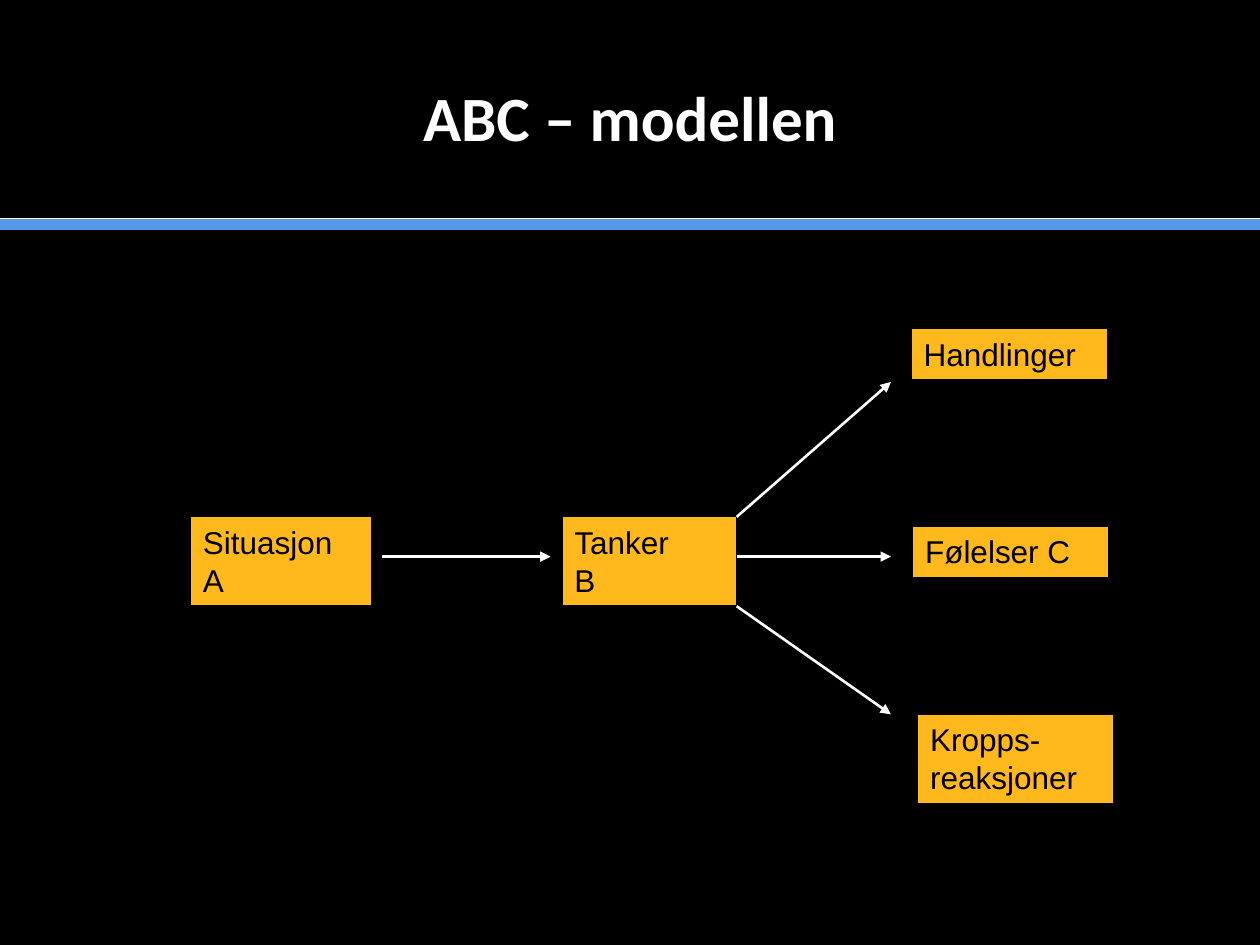
from dataclasses import dataclass

from lxml import etree
from pptx import Presentation
from pptx.dml.color import RGBColor
from pptx.enum.shapes import MSO_CONNECTOR, MSO_SHAPE
from pptx.enum.text import MSO_ANCHOR, MSO_AUTO_SIZE, PP_ALIGN
from pptx.oxml.ns import qn
from pptx.util import Cm, Pt

STRAIGHT = MSO_CONNECTOR.STRAIGHT
RECTANGLE = MSO_SHAPE.RECTANGLE
TOP, MIDDLE = MSO_ANCHOR.TOP, MSO_ANCHOR.MIDDLE
GROW = MSO_AUTO_SIZE.SHAPE_TO_FIT_TEXT
LEFT, CENTER = PP_ALIGN.LEFT, PP_ALIGN.CENTER
TITLE_ONLY = 5

COLORS = {
    "background": "000000",
    "rule": "5799E8",
    "light": "FFFFFF",
    "box": "FFB91D",
    "dark": "000000",
}
TITLE_FONT = {"name": "Calibri", "size": Pt(36), "bold": True}
BOX_FONT = {"name": "Arial", "size": Pt(18), "bold": False}
BOX_FRAME = {"word_wrap": True, "auto_size": GROW, "vertical_anchor": TOP}

SLIDE_WIDTH, SLIDE_HEIGHT = 25.4, 19.05
ONE_LINE, TWO_LINES = 1.03, 1.8
OUTCOME_WIDTH = 3.96


@dataclass(frozen=True)
class Box:
    text: str
    left: float
    top: float
    width: float
    height: float


@dataclass(frozen=True)
class Line:
    x1: float
    y1: float
    x2: float
    y2: float
    color: str = "light"
    weight: float = 1.5
    arrow: bool = True


SITUATION = Box("Situasjon A", 3.84, 10.42, 3.66, TWO_LINES)
THOUGHTS = Box("Tanker\vB", 11.33, 10.42, 3.52, TWO_LINES)
OUTCOMES = [
    Box("Handlinger", 18.37, 6.63, OUTCOME_WIDTH, ONE_LINE),
    Box("Følelser C", 18.4, 10.61, OUTCOME_WIDTH, ONE_LINE),
    Box("Kropps-\vreaksjoner", 18.5, 14.4, OUTCOME_WIDTH, TWO_LINES),
]

RULES = [
    Line(0, 4.52, SLIDE_WIDTH, 4.52, "rule", 7, False),
    Line(0, 4.4, SLIDE_WIDTH, 4.4, "light", 0.5, False),
]
FLOW_Y = 11.22
FAN_START, FAN_END = THOUGHTS.left + THOUGHTS.width, 17.96
ARROWS = [
    Line(7.7, FLOW_Y, 11.1, FLOW_Y),
    Line(FAN_START, THOUGHTS.top, FAN_END, 7.7),
    Line(FAN_START, THOUGHTS.top + THOUGHTS.height, FAN_END, 14.4),
    Line(FAN_START, FLOW_Y, FAN_END, FLOW_Y),
]


def color(key: str) -> RGBColor:
    return RGBColor.from_string(COLORS[key])


def apply_format(target, values: dict) -> None:
    for attribute, value in values.items():
        setattr(target, attribute, value)


def style_text(frame, font: dict, color_key: str, alignment) -> None:
    for paragraph in frame.paragraphs:
        paragraph.alignment = alignment
        for run in paragraph.runs:
            apply_format(run.font, font)
            run.font.color.rgb = color(color_key)


def draw_title(slide, text: str) -> None:
    title = slide.shapes.title
    apply_format(title, {"left": Cm(1.27), "top": Cm(0.76),
                         "width": Cm(22.86), "height": Cm(3.18)})
    title.text_frame.text = text
    title.text_frame.vertical_anchor = MIDDLE
    style_text(title.text_frame, TITLE_FONT, "light", CENTER)


def draw_box(slide, box: Box) -> None:
    shape = slide.shapes.add_shape(
        RECTANGLE, Cm(box.left), Cm(box.top), Cm(box.width), Cm(box.height))
    shape.shadow.inherit = False
    shape.fill.solid()
    shape.fill.fore_color.rgb = color("box")
    shape.line.color.rgb = color("dark")
    shape.line.width = Pt(0.75)
    shape.text_frame.text = box.text
    apply_format(shape.text_frame, BOX_FRAME)
    style_text(shape.text_frame, BOX_FONT, "dark", LEFT)


def draw_line(slide, line: Line) -> None:
    connector = slide.shapes.add_connector(
        STRAIGHT, Cm(line.x1), Cm(line.y1), Cm(line.x2), Cm(line.y2))
    connector.line.color.rgb = color(line.color)
    connector.line.width = Pt(line.weight)
    properties = connector._element.spPr
    if line.arrow:
        etree.SubElement(properties.find(qn("a:ln")), qn("a:tailEnd"), type="triangle")
    etree.SubElement(properties, qn("a:effectLst"))


def main() -> None:
    presentation = Presentation()
    presentation.slide_width = Cm(SLIDE_WIDTH)
    presentation.slide_height = Cm(SLIDE_HEIGHT)
    slide = presentation.slides.add_slide(presentation.slide_layouts[TITLE_ONLY])
    slide.background.fill.solid()
    slide.background.fill.fore_color.rgb = color("background")

    for rule in RULES:
        draw_line(slide, rule)
    draw_title(slide, "ABC – modellen")
    for box in [SITUATION, THOUGHTS, *OUTCOMES]:
        draw_box(slide, box)
    for arrow in ARROWS:
        draw_line(slide, arrow)
    presentation.save("out.pptx")


if __name__ == "__main__":
    main()
